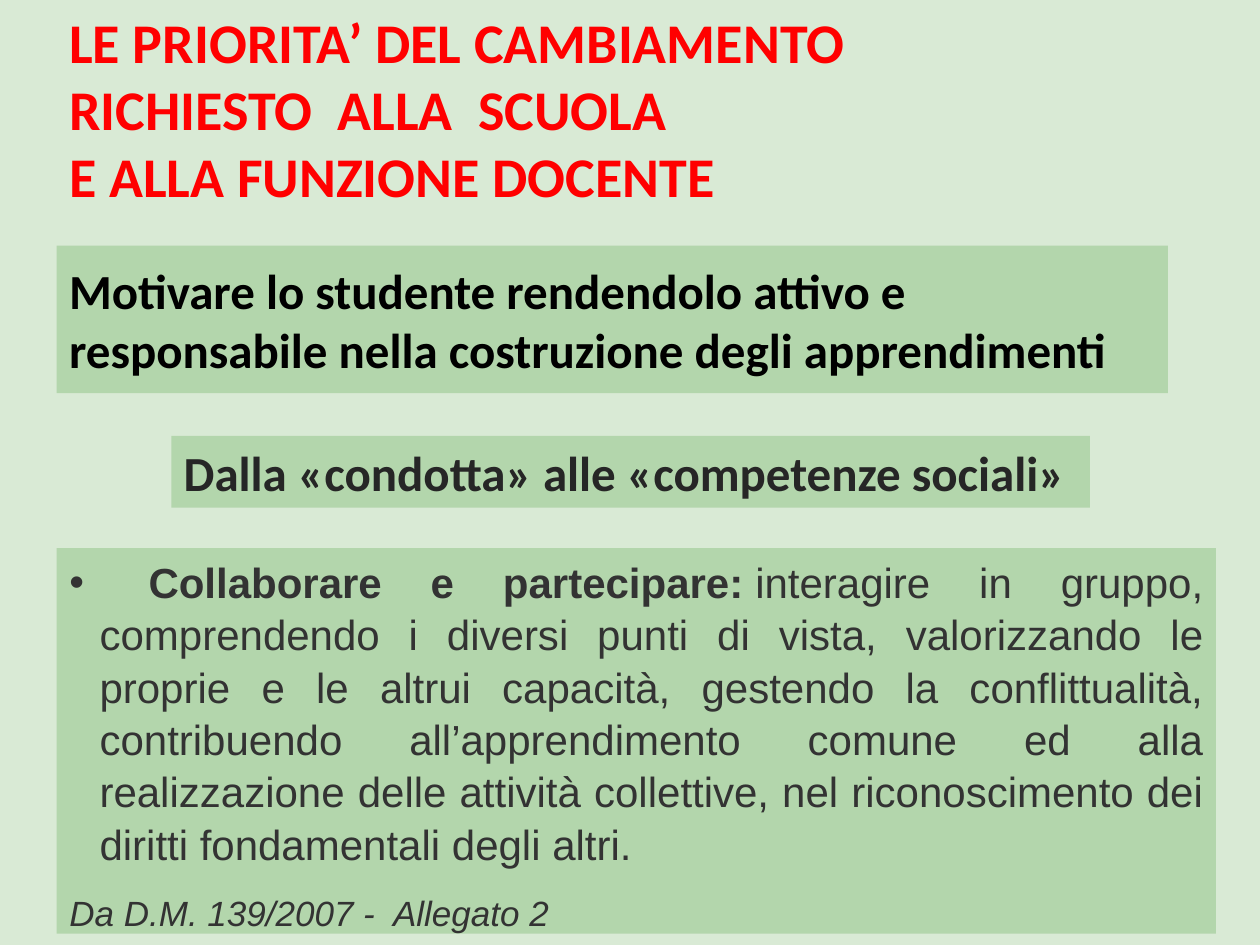
import pptx
import pptx.util
import pptx.dml.color
import pptx.enum.shapes
import pptx.enum.text
import pptx.oxml

Inches = pptx.util.Inches
Pt = pptx.util.Pt
Align = pptx.enum.text.PP_ALIGN
Anchor = pptx.enum.text.MSO_ANCHOR
HUES = {"back": "D9EAD5", "band": "B3D6AC", "title": "FF0000",
        "goal": "000000", "theme": "262626", "body": "333333"}


def paint(fill, hue):
    """Fill with a solid colour from the palette."""
    fill.solid()
    fill.fore_color.rgb = pptx.dml.color.RGBColor.from_string(HUES[hue])


def place(shape, box):
    """Move a shape to a box of left, top, width and height."""
    shape.left, shape.top, shape.width, shape.height = map(Inches, box)


def setup(frame, anchor, wrap=True):
    """Set wrapping and anchoring of a text frame."""
    frame.word_wrap = wrap
    frame.auto_size = pptx.enum.text.MSO_AUTO_SIZE.NONE
    frame.vertical_anchor = anchor


def write(para, text, size, hue, face="Calibri", bold=True, slant=False):
    """Add one formatted run to a paragraph."""
    run = para.add_run()
    run.text = text
    font = run.font
    font.size, font.name, font.bold, font.italic = Pt(size), face, bold, slant
    paint(font.fill, hue)


def indent(para, hang, mark=None):
    """Give a paragraph a hanging indent and a bullet or none."""
    props = para._p.get_or_add_pPr()
    props.set("marL", str(Inches(hang)))
    props.set("indent", str(-Inches(hang)))
    space = 'xmlns:a="http://schemas.openxmlformats.org/drawingml/2006/main"'
    tag = f'<a:buChar {space} char="{mark}"/>' if mark else f"<a:buNone {space}/>"
    props.append(pptx.oxml.parse_xml(tag))


def head(slide, box, lines):
    """Fill the title placeholder with left-aligned lines."""
    title = slide.shapes.title
    place(title, box)
    frame = title.text_frame
    setup(frame, Anchor.TOP)
    for i, line in enumerate(lines):
        para = frame.paragraphs[0] if i == 0 else frame.add_paragraph()
        para.alignment = Align.LEFT
        write(para, line, 32, "title")


def band(slide, box, text, hue, wrap=True):
    """Add a filled band with one bold sentence."""
    kind = pptx.enum.shapes.MSO_SHAPE.RECTANGLE
    shape = slide.shapes.add_shape(kind, *map(Inches, box))
    shape.shadow.inherit = False
    paint(shape.fill, "band")
    shape.line.fill.background()
    setup(shape.text_frame, Anchor.MIDDLE, wrap)
    para = shape.text_frame.paragraphs[0]
    para.alignment = Align.LEFT
    write(para, text, 28, hue)


def body(slide, box, lead, text, source):
    """Fill the body placeholder with a bullet and its source."""
    shape = slide.placeholders[1]
    place(shape, box)
    paint(shape.fill, "band")
    frame = shape.text_frame
    setup(frame, Anchor.TOP)
    item, note = frame.paragraphs[0], frame.add_paragraph()
    for para, gap in ((item, 0), (note, 12)):
        para.alignment = Align.JUSTIFY
        para.line_spacing = 1.04
        para.space_before = Pt(gap)
    indent(item, 0.24, "•")
    indent(note, 0)
    write(item, lead, 24, "body", "Arial")
    write(item, text, 24, "body", "Arial", False)
    write(note, source, 20, "body", "Arial", False, True)


def main():
    """Build and save the slide."""
    deck = pptx.Presentation()
    deck.slide_width, deck.slide_height = Inches(10), Inches(7.5)
    slide = deck.slides.add_slide(deck.slide_layouts[1])
    paint(slide.background.fill, "back")
    left = 0.45
    head(slide, (left, 0.01, 8.96, 1.72),
         ("LE PRIORITA’ DEL CAMBIAMENTO", "RICHIESTO  ALLA  SCUOLA",
          "E ALLA FUNZIONE DOCENTE"))
    band(slide, (left, 1.95, 8.82, 1.17),
         "Motivare lo studente rendendolo attivo e responsabile "
         "nella costruzione degli apprendimenti", "goal")
    band(slide, (1.36, 3.46, 7.29, 0.57),
         "Dalla «condotta» alle «competenze sociali»", "theme", False)
    body(slide, (left, 4.35, 9.2, 3.06), " Collaborare e partecipare:\N{NO-BREAK SPACE}",
         "interagire in gruppo, comprendendo i diversi punti di vista, "
         "valorizzando le proprie e le altrui capacità, gestendo la "
         "conflittualità, contribuendo all’apprendimento comune ed alla "
         "realizzazione delle attività collettive, nel riconoscimento dei "
         "diritti fondamentali degli altri.",
         "Da D.M. 139/2007 -  Allegato 2 ")
    deck.save("out.pptx")


if __name__ == "__main__":
    main()
